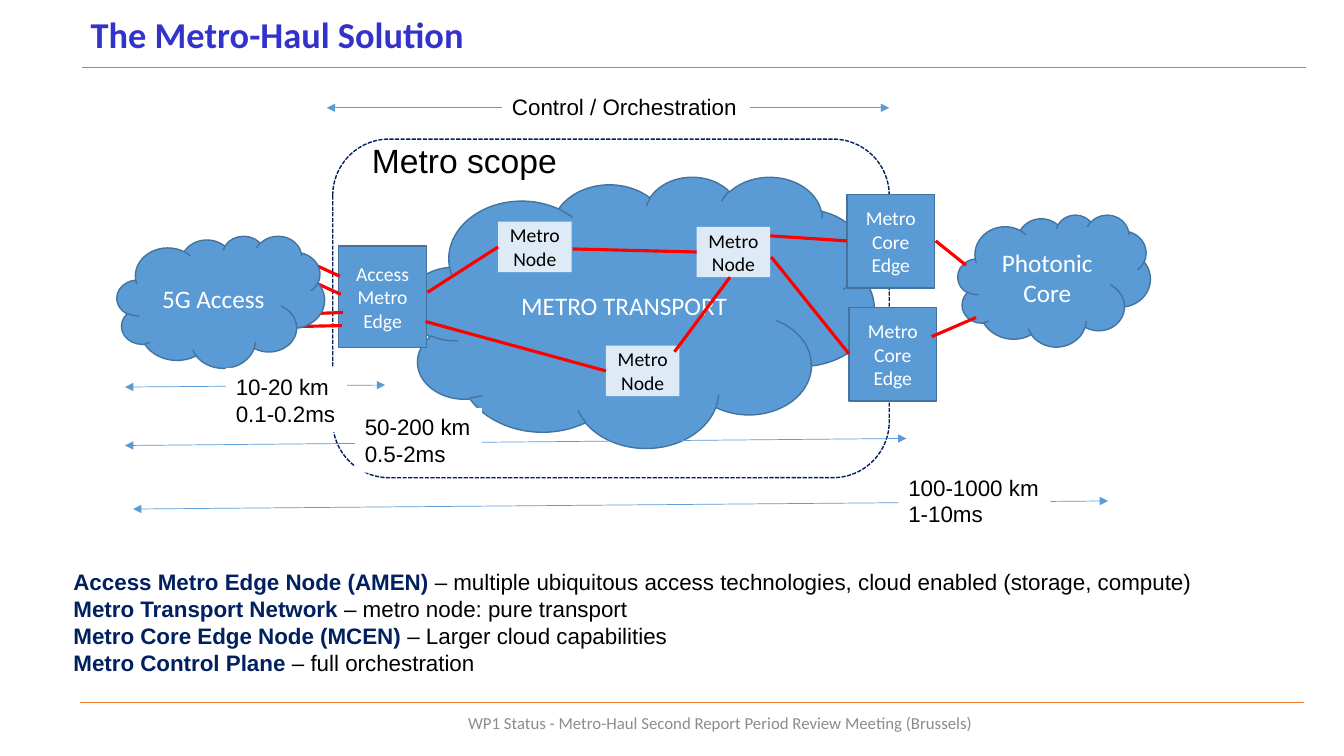
"""Build the Metro-Haul solution slide."""
from collections import namedtuple

from pptx import Presentation
from pptx.dml.color import RGBColor
from pptx.enum.dml import MSO_LINE
from pptx.enum.shapes import MSO_CONNECTOR, MSO_SHAPE
from pptx.enum.text import MSO_ANCHOR as ANCHOR, MSO_AUTO_SIZE as AUTO_SIZE, PP_ALIGN as ALIGN
from pptx.oxml.ns import qn
from pptx.util import Inches, Pt
from lxml.etree import SubElement

Box = namedtuple("Box", "left top width height")

BLACK = RGBColor(0x00, 0x00, 0x00)
WHITE = RGBColor(0xFF, 0xFF, 0xFF)
TITLE_BLUE = RGBColor(0x33, 0x33, 0xCC)
NAVY = RGBColor(0x00, 0x20, 0x60)
BLUE = RGBColor(0x5B, 0x9B, 0xD5)
OUTLINE_BLUE = RGBColor(0x43, 0x73, 0x9E)
PALE_BLUE = RGBColor(0xDE, 0xEB, 0xF7)
RED = RGBColor(0xFF, 0x00, 0x00)
ORANGE = RGBColor(0xED, 0x7D, 0x31)
RULE_GREY = RGBColor(0x8C, 0x8C, 0x9C)
FOOTER_GREY = RGBColor(0x8C, 0x8C, 0x8C)

TITLE = {"name": "Calibri", "size": Pt(26), "bold": True, "color": TITLE_BLUE}
FOOTER = {"name": "Calibri", "size": Pt(12), "color": FOOTER_GREY}
CLOUD = {"name": "Calibri", "size": Pt(18), "color": WHITE}
EDGE = {"name": "Calibri", "size": Pt(14), "color": WHITE}
NODE = {"name": "Calibri", "size": Pt(14), "color": BLACK}
SCOPE = {"name": "Arial", "size": Pt(24), "color": BLACK}
BODY = {"name": "Arial", "size": Pt(16), "color": BLACK}
TERM = {"name": "Arial", "size": Pt(16), "bold": True, "color": NAVY}

CLOUDS = [
    ((3.04, 1.25, 4.63, 2.69), "METRO TRANSPORT"),
    ((8.5, 1.63, 1.91, 1.31), "Photonic Core"),
]
ACCESS_CLOUD = ((0.16, 1.84, 2.06, 1.31), "5G Access")
EDGES = [
    ((2.36, 1.94, 0.87, 1.01), "Access\nMetro\nEdge"),
    ((7.4, 1.43, 0.87, 0.93), "Metro Core\nEdge"),
    ((7.42, 2.55, 0.87, 0.93), "Metro Core\nEdge"),
]
NODE_CORNERS = [(3.94, 1.7), (5.91, 1.75), (5.01, 2.93)]
LINKS = [
    (2.15, 2.14, 2.37, 2.24), (1.93, 2.74, 2.39, 2.73),
    (2.16, 2.32, 2.38, 2.42), (2.13, 2.61, 2.4, 2.6),
    (8.28, 1.89, 8.58, 2.13), (8.24, 2.84, 8.68, 2.65),
    (3.24, 2.4, 3.94, 1.95), (3.22, 2.69, 5.01, 3.18),
    (4.68, 1.97, 5.91, 2.0), (6.64, 1.84, 7.4, 1.89),
    (6.65, 2.05, 7.42, 3.01), (5.69, 2.99, 6.24, 2.25),
]
SPANS = [
    ((0.24, 3.34, 2.82, 3.32), (1.24, 3.15, 1.2, 0.64), "10-20 km\n0.1-0.2ms"),
    ((2.24, 0.57, 7.82, 0.57), (3.98, 0.37, 2.46, 0.37), "Control / Orchestration"),
    ((0.24, 3.92, 7.99, 3.85), (2.52, 3.55, 1.26, 0.64), "50-200 km\n0.5-2ms"),
    ((0.32, 4.55, 9.99, 4.47), (7.91, 4.15, 1.51, 0.64), "100-1000 km\n1-10ms"),
]
DEFINITIONS = [
    ("Access Metro Edge Node (AMEN) ",
     "– multiple ubiquitous access technologies, cloud enabled (storage, compute)"),
    ("Metro Transport Network ", "– metro node: pure transport"),
    ("Metro Core Edge Node (MCEN) ", "– Larger cloud capabilities"),
    ("Metro Control Plane ", "– full orchestration"),
]


def inside(box, part):
    """Move a part's offsets to slide coordinates."""
    left, top, width, height = part
    return Box(box.left + left, box.top + top, width, height)


def add_run(paragraph, text, style):
    """Append a run formatted from a style."""
    run = paragraph.add_run()
    run.text = text
    for name, value in style.items():
        if name == "color":
            run.font.color.rgb = value
        else:
            setattr(run.font, name, value)


def write(shape, paragraphs, align=ALIGN.LEFT, **frame_format):
    """Fill a shape with paragraphs, each a list of text and style pairs."""
    frame = shape.text_frame
    for name, value in frame_format.items():
        setattr(frame, name, value)
    for index, runs in enumerate(paragraphs):
        paragraph = frame.add_paragraph() if index else frame.paragraphs[0]
        paragraph.alignment = align
        for text, style in runs:
            add_run(paragraph, text, style)


def plain(text, style):
    """Split text into paragraphs of one style."""
    return [[(line, style)] for line in text.split("\n")]


def add_text(slide, box, paragraphs, wrap=True, **options):
    """Add a text box."""
    shape = slide.shapes.add_textbox(*map(Inches, box))
    write(shape, paragraphs, word_wrap=wrap, **options)
    return shape


def add_block(slide, kind, box, fill, outline, text="", style=None):
    """Add a preset shape with centred text."""
    shape = slide.shapes.add_shape(kind, *map(Inches, box))
    shape.shadow.inherit = False
    if fill is None:
        shape.fill.background()
    else:
        shape.fill.solid()
        shape.fill.fore_color.rgb = fill
    if outline is None:
        shape.line.fill.background()
    else:
        shape.line.color.rgb = outline
        shape.line.width = Pt(1)
    if text:
        write(shape, plain(text, style), ALIGN.CENTER,
              word_wrap=True, vertical_anchor=ANCHOR.MIDDLE)
    return shape


def add_line(slide, box, ends, color, width, arrows=False):
    """Add a line between two points given as offsets in a box."""
    points = [offset + origin for offset, origin in zip(ends, (box.left, box.top) * 2)]
    connector = slide.shapes.add_connector(MSO_CONNECTOR.STRAIGHT, *map(Inches, points))
    connector.line.color.rgb = color
    connector.line.width = Pt(width)
    properties = connector.element.spPr
    if arrows:
        for tag in ("a:headEnd", "a:tailEnd"):
            SubElement(properties.find(qn("a:ln")), qn(tag), type="triangle")
    SubElement(properties, qn("a:effectLst"))


def add_header(slide, box):
    """Place the title and the rule under it."""
    add_line(slide, box, (0.01, 0.7, 12.15, 0.7), RULE_GREY, 0.5)
    shape = add_text(slide, inside(box, (0, 0, 8.93, 0.79)),
                     plain("The Metro-Haul Solution", TITLE), vertical_anchor=ANCHOR.MIDDLE)
    shape.text_frame.paragraphs[0].line_spacing = 0.9


def add_network(slide, box):
    """Place the scope frame, clouds, nodes and links."""
    frame = add_block(slide, MSO_SHAPE.ROUNDED_RECTANGLE,
                      inside(box, (2.3, 0.88, 5.52, 3.36)), None, NAVY)
    frame.line.dash_style = MSO_LINE.SQUARE_DOT
    for part, text in CLOUDS:
        add_block(slide, MSO_SHAPE.CLOUD, inside(box, part), BLUE, OUTLINE_BLUE, text, CLOUD)
    for part, text in EDGES:
        add_block(slide, MSO_SHAPE.RECTANGLE, inside(box, part), BLUE, OUTLINE_BLUE, text, EDGE)
    for corner in NODE_CORNERS:
        add_block(slide, MSO_SHAPE.RECTANGLE, inside(box, (*corner, 0.73, 0.5)),
                  PALE_BLUE, None, "Metro Node", NODE)
    for ends in LINKS:
        add_line(slide, box, ends, RED, 2.25)
    part, text = ACCESS_CLOUD
    add_block(slide, MSO_SHAPE.CLOUD, inside(box, part), BLUE, OUTLINE_BLUE, text, CLOUD)
    add_text(slide, inside(box, (2.59, 0.84, 2.05, 0.5)), plain("Metro scope", SCOPE),
             wrap=False, auto_size=AUTO_SIZE.SHAPE_TO_FIT_TEXT)


def add_spans(slide, box):
    """Place the distance arrows with their labels."""
    for ends, part, text in SPANS:
        add_line(slide, box, ends, BLUE, 0.5, arrows=True)
        label = add_text(slide, inside(box, part), plain(text, BODY),
                         wrap=False, auto_size=AUTO_SIZE.SHAPE_TO_FIT_TEXT)
        label.fill.solid()
        label.fill.fore_color.rgb = WHITE


def add_definitions(slide, box):
    """Place the list of terms."""
    paragraphs = [[(term, TERM), (meaning, BODY)] for term, meaning in DEFINITIONS]
    add_text(slide, box, paragraphs, auto_size=AUTO_SIZE.SHAPE_TO_FIT_TEXT)


def add_footer(slide, box):
    """Place the bottom rule and the footer text."""
    add_line(slide, box, (0, 0, 12.14, 0), ORANGE, 0.5)
    text = "WP1 Status - Metro-Haul Second Report Period Review Meeting (Brussels)"
    add_text(slide, inside(box, (1.12, 0, 10.47, 0.4)), plain(text, FOOTER),
             align=ALIGN.CENTER, vertical_anchor=ANCHOR.MIDDLE)


def main():
    """Create the presentation and save it."""
    presentation = Presentation()
    presentation.slide_width = Inches(13.33)
    presentation.slide_height = Inches(7.5)
    slide = presentation.slides.add_slide(presentation.slide_layouts[6])
    diagram = Box(1, 0.5, 10.5, 4.8)
    add_header(slide, Box(0.8, -0.03, 12.15, 0.79))
    add_network(slide, diagram)
    add_spans(slide, diagram)
    add_definitions(slide, Box(0.63, 5.59, 11.7, 1.21))
    add_footer(slide, Box(0.79, 6.97, 12.14, 0.4))
    presentation.save("out.pptx")


if __name__ == "__main__":
    main()
